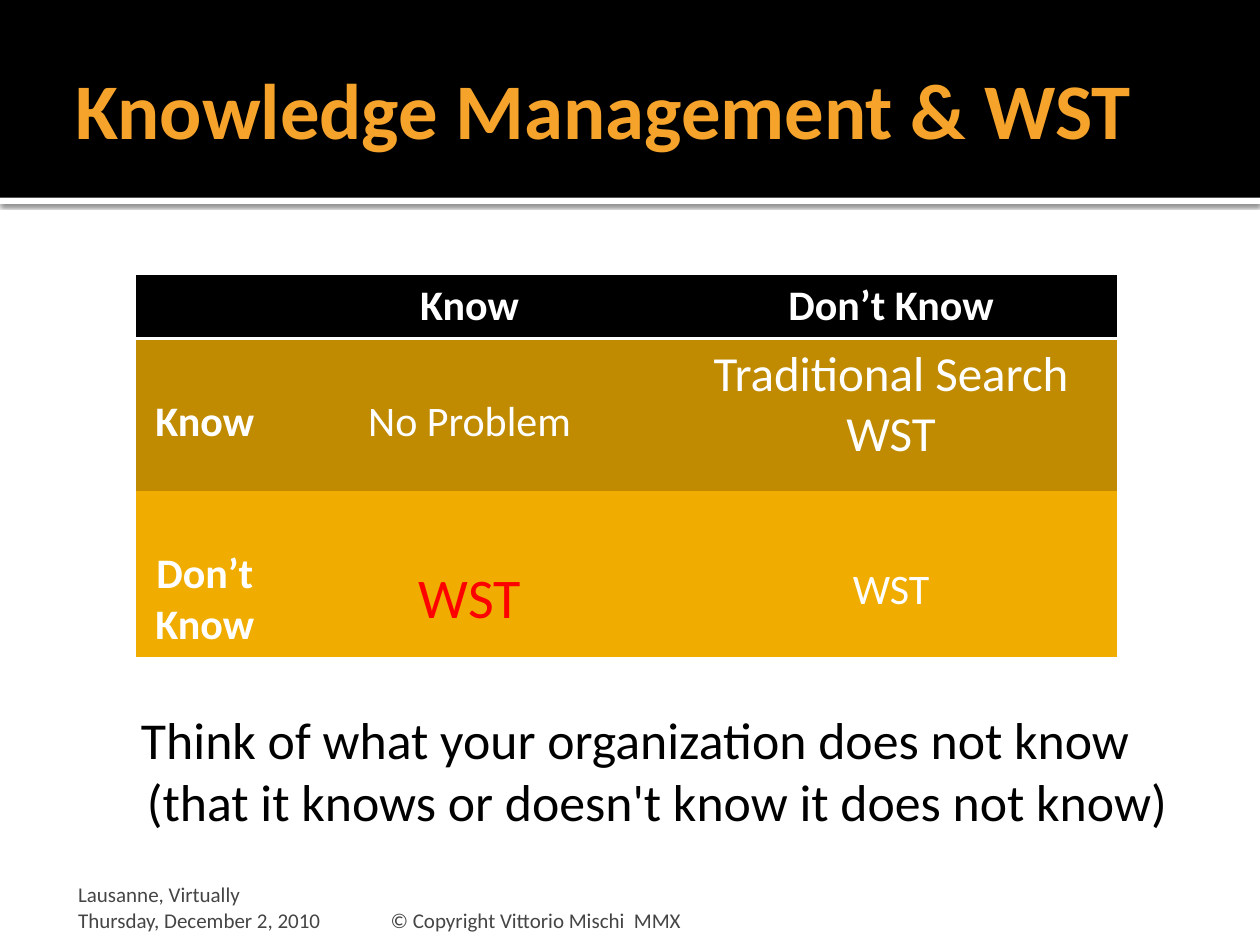
from lxml.etree import SubElement
from pptx import Presentation
from pptx.dml.color import RGBColor
from pptx.enum.shapes import MSO_SHAPE
from pptx.enum.text import MSO_ANCHOR, PP_ALIGN
from pptx.oxml.ns import qn
from pptx.util import Pt

TITLE = "Knowledge Management & WST"
MESSAGE = ("Think of what your organization does not know\v"
           "(that it knows or doesn't know it does not know)")
FOOTERS = [
    ("Lausanne, Virtually\vThursday, December 2, 2010", (36, 511.2, 168, 21.6), 8.64),
    ("© Copyright Vittorio Mischi  MMX", (219.6, 511.2, 433.4, 21.6), 3.6),
]
COLUMN_WIDTHS = [78.5, 224, 257.8]
ROWS = [
    (36.4, "000000", [
        ("", {}),
        ("Know", {"bold": True}),
        ("Don’t Know", {"bold": True}),
    ]),
    (86.9, "C08B00", [
        ("Know", {"bold": True, "top": 33}),
        ("No Problem", {"top": 33}),
        ("Traditional Search\nWST", {"size": 28}),
    ]),
    (95.3, "F0AD00", [
        ("Don’t\nKnow", {"bold": True, "top": 33}),
        ("WST", {"size": 32, "color": "FF0000", "top": 42.6}),
        ("WST", {"top": 42.6}),
    ]),
]
NO_STYLE = "{2D5ABB26-0587-4C30-8999-92F81FD0307C}"


def paint(fill, color):
    fill.solid()
    fill.fore_color.rgb = RGBColor.from_string(color)


def write(frame, text, size=24, color="FFFFFF", bold=False, align=PP_ALIGN.CENTER):
    frame.word_wrap = True
    frame.text = text
    for paragraph in frame.paragraphs:
        paragraph.alignment = align
        for run in paragraph.runs:
            run.font.name = "Calibri"
            run.font.size = Pt(size)
            run.font.bold = bold
            paint(run.font.fill, color)


def add_text(slide, text, place, insets, anchor, **style):
    frame = slide.shapes.add_textbox(*map(Pt, place)).text_frame
    (frame.margin_left, frame.margin_top,
     frame.margin_right, frame.margin_bottom) = map(Pt, insets)
    frame.vertical_anchor = anchor
    write(frame, text, **style)
    return frame


def add_band(slide, place, color):
    band = slide.shapes.add_shape(MSO_SHAPE.RECTANGLE, *map(Pt, place))
    band.shadow.inherit = False
    band.line.fill.background()
    paint(band.fill, color)
    return band


def add_shadow(band):
    effects = band.element.spPr.find(qn("a:effectLst"))
    shadow = SubElement(effects, qn("a:outerShdw"), blurRad=str(Pt(2.5)),
                        dist=str(Pt(0.8)), dir="5400000", rotWithShape="0")
    black = SubElement(shadow, qn("a:srgbClr"), val="000000")
    SubElement(black, qn("a:alpha"), val="60000")


def add_bottom_border(cell, color, width):
    properties = cell._tc.get_or_add_tcPr()
    border = properties.makeelement(qn("a:lnB"), {"w": str(Pt(width))})
    properties.insert(0, border)
    fill = SubElement(border, qn("a:solidFill"))
    SubElement(fill, qn("a:srgbClr"), val=color)


def add_matrix(slide):
    heights = [height for height, _, _ in ROWS]
    matrix = slide.shapes.add_table(
        len(ROWS), len(COLUMN_WIDTHS), Pt(77.8), Pt(157),
        Pt(sum(COLUMN_WIDTHS)), Pt(sum(heights))).table
    matrix._tbl.tblPr.find(qn("a:tableStyleId")).text = NO_STYLE
    for column, width in zip(matrix.columns, COLUMN_WIDTHS):
        column.width = Pt(width)
    for row, (height, color, entries) in zip(matrix.rows, ROWS):
        row.height = Pt(height)
        for cell, (text, look) in zip(row.cells, entries):
            style = dict(look)
            cell.margin_top = Pt(style.pop("top", 3.6))
            paint(cell.fill, color)
            write(cell.text_frame, text, **style)
    for cell in matrix.rows[0].cells:
        add_bottom_border(cell, "FFFFFF", 2)


def main():
    deck = Presentation()
    deck.slide_width, deck.slide_height = Pt(720), Pt(540)
    slide = deck.slides.add_slide(deck.slide_layouts[6])

    add_shadow(add_band(slide, (0, 113, 720, 3.6), "FFFFFF"))
    add_band(slide, (0, 0, 720, 113), "000000")
    for text, place, left_inset in FOOTERS:
        add_text(slide, text, place, (left_inset, 3.6, 3.6, 0), MSO_ANCHOR.BOTTOM,
                 size=12, color="454545", align=PP_ALIGN.LEFT)
    add_text(slide, TITLE, (36, 12.2, 648, 98.6), (7.2, 3.6, 3.6, 3.6),
             MSO_ANCHOR.MIDDLE, size=45, color="F5A32B", bold=True,
             align=PP_ALIGN.LEFT)
    message = add_text(slide, MESSAGE, (36, 397.4, 648, 85), (4.3, 7.2, 7.2, 3.6),
                       MSO_ANCHOR.TOP, size=29.6, color="000000")
    indents = message.paragraphs[0]._p.get_or_add_pPr()
    indents.set("marL", str(Pt(34.6)))
    indents.set("indent", str(Pt(-25.2)))
    add_matrix(slide)
    deck.save("out.pptx")


if __name__ == "__main__":
    main()
